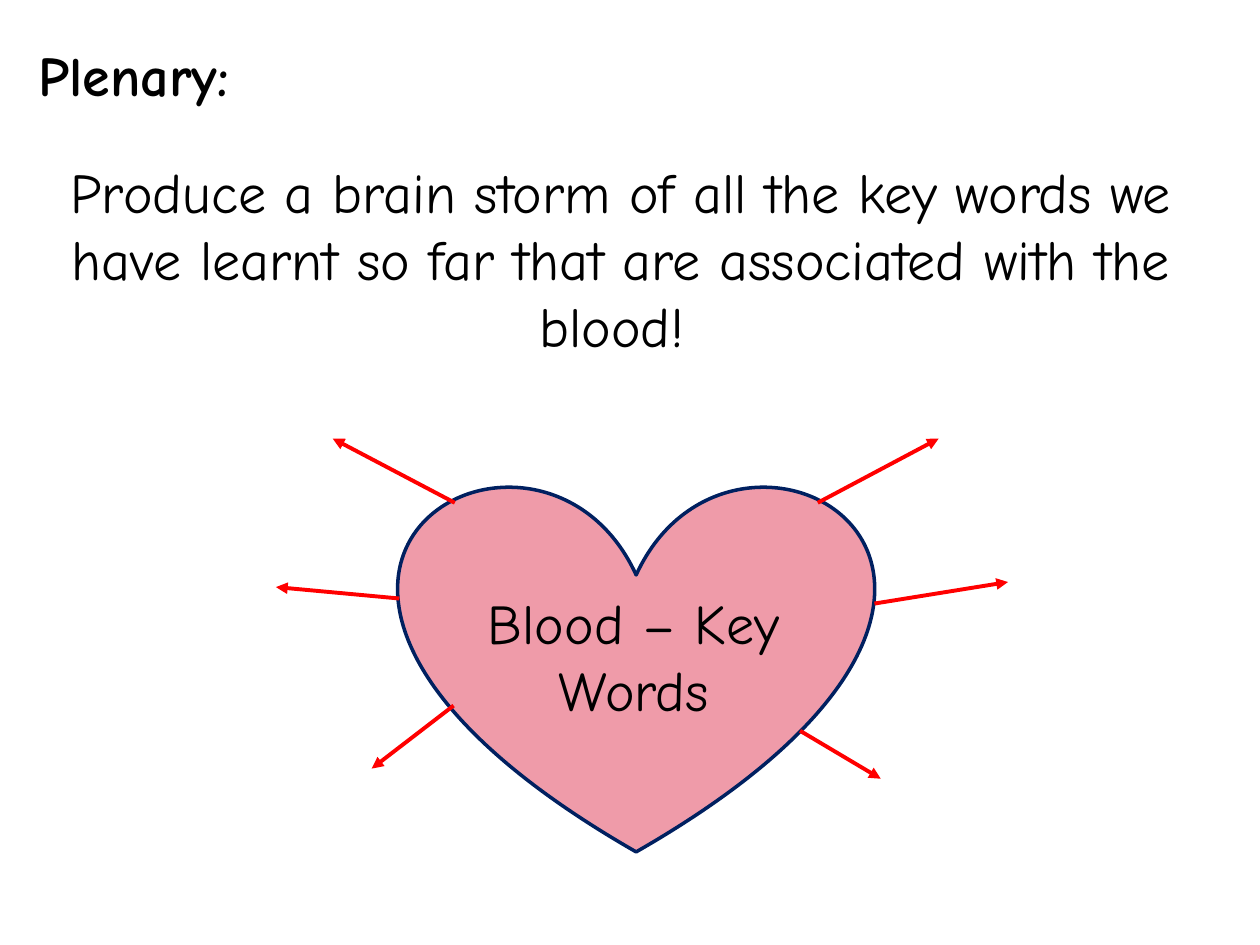
from lxml import etree
from pptx import Presentation
from pptx import util as u
from pptx.dml.color import RGBColor
from pptx.enum import shapes, text
from pptx.oxml import ns

Pt = u.Pt
FONT = "Comic Neue"
COLORS = {"text": "000000", "heart": "EF9BA9", "outline": "002060", "arrow": "FF0000"}

# Arrow start and end points, from the heart outwards
ARROWS = [
    ((259.9, 287.3), (190.1, 250.6)),
    ((467.3, 287.3), (536.4, 250.6)),
    ((499.7, 344.9), (576, 332.6)),
    ((228.2, 342), (157.7, 335.5)),
    ((259.2, 403.2), (212.4, 439.2)),
    ((457.2, 417.6), (503.3, 445)),
]


def rgb(name):
    return RGBColor.from_string(COLORS[name])


def add_text(s, box, lines):
    """Add a text box; each line is (wording, bold, alignment, space before)."""
    tf = s.shapes.add_textbox(*map(Pt, box)).text_frame
    tf.word_wrap = True
    for i, (wording, bold, align, gap) in enumerate(lines):
        p = tf.paragraphs[0] if i == 0 else tf.add_paragraph()
        p.text = wording
        p.alignment = align
        p.space_before = Pt(gap)
        p.font.name = FONT
        p.font.size = Pt(32)
        p.font.bold = bold
        p.font.color.rgb = rgb("text")


def add_heart(s, box):
    sp = s.shapes.add_shape(shapes.MSO_SHAPE.HEART, *map(Pt, box))
    sp.shadow.inherit = False
    sp.fill.solid()
    sp.fill.fore_color.rgb = rgb("heart")
    sp.line.color.rgb = rgb("outline")
    sp.line.width = Pt(2)


def add_arrow(s, start, end):
    c = s.shapes.add_connector(shapes.MSO_CONNECTOR.STRAIGHT, *map(Pt, start + end))
    c.line.color.rgb = rgb("arrow")
    c.line.width = Pt(2.25)
    etree.SubElement(c.line._get_or_add_ln(), ns.qn("a:tailEnd"), type="triangle")
    etree.SubElement(c._element.spPr, ns.qn("a:effectLst"))


def main():
    prs = Presentation()
    prs.slide_width, prs.slide_height = Pt(720), Pt(540)
    s = prs.slides.add_slide(prs.slide_layouts[6])
    left, center = text.PP_ALIGN.LEFT, text.PP_ALIGN.CENTER

    # Heading and task
    add_text(s, (15.1, 19.4, 679.7, 191.5), [
        ("Plenary:", True, left, 0),
        ("Produce a brain storm of all the key words we have learnt so far "
         "that are associated with the blood! ", False, center, 28.5),
    ])

    # Heart with its label
    add_heart(s, (228.2, 275.8, 270.7, 211))
    add_text(s, (270.7, 332.6, 182.9, 85), [("Blood – Key Words", False, center, 0)])

    # Arrows for the key words
    for start, end in ARROWS:
        add_arrow(s, start, end)

    prs.save("out.pptx")


if __name__ == "__main__":
    main()
